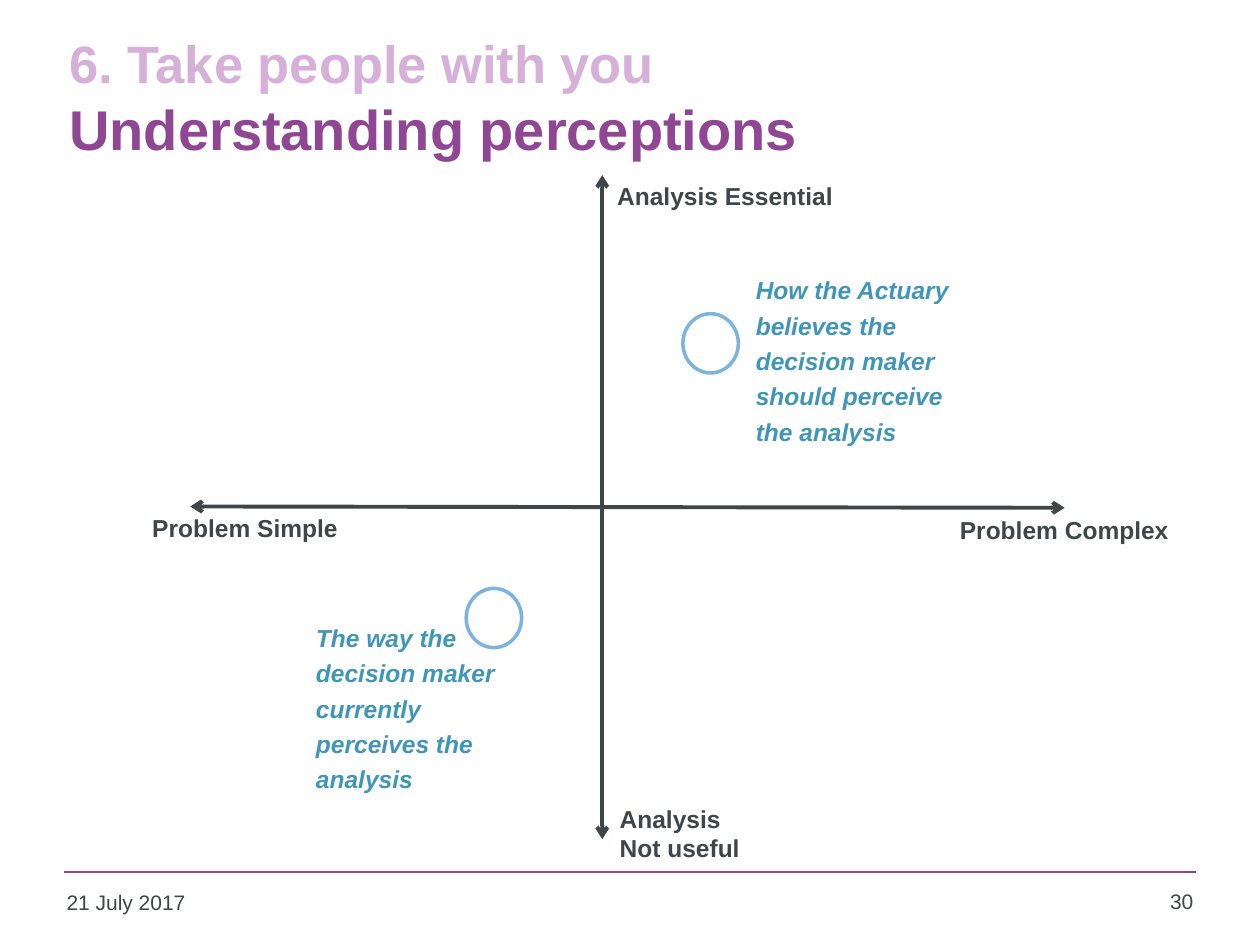
from pptx import Presentation
from pptx.dml.color import RGBColor
from pptx.enum.shapes import MSO_CONNECTOR as Connector, MSO_SHAPE as Shape
from pptx.enum.text import MSO_ANCHOR as Anchor, PP_ALIGN as Align
from pptx.oxml.ns import qn
from pptx.util import Inches, Pt
from lxml.etree import SubElement

PURPLE = RGBColor(0x8F, 0x46, 0x93)
LILAC = RGBColor(0xD7, 0xB0, 0xD9)
CHARCOAL = RGBColor(0x3F, 0x45, 0x48)
TEAL = RGBColor(0x40, 0x96, 0xB8)
SKY = RGBColor(0x7C, 0xB3, 0xE1)
FONT = "Arial"


def style_span(span, size, color, bold=False, italic=False):
    span.font.name = FONT
    span.font.size = Pt(size)
    span.font.color.rgb = color
    span.font.bold = bold
    span.font.italic = italic


def place(shape, left, top, width, height):
    shape.left, shape.top = Inches(left), Inches(top)
    shape.width, shape.height = Inches(width), Inches(height)


def add_title(page, first_line, second_line):
    title = page.shapes.title
    place(title, 0.45, 0.14, 9.07, 1.25)
    frame = title.text_frame
    frame.word_wrap = True
    frame.vertical_anchor = Anchor.MIDDLE
    para = frame.paragraphs[0]
    para.text = f"{first_line}\v{second_line}"
    para.alignment = Align.LEFT
    first, second = para.runs
    style_span(first, 30, LILAC, bold=True)
    style_span(second, 32, PURPLE, bold=True)


def add_text(page, text, bounds, size=14, color=CHARCOAL, bold=True,
             italic=False, align=Align.LEFT, spacing=1.0):
    box = page.shapes.add_textbox(*map(Inches, bounds))
    frame = box.text_frame
    frame.word_wrap = True
    frame.text = text
    para = frame.paragraphs[0]
    para.alignment = align
    para.line_spacing = spacing
    style_span(para.runs[0], size, color, bold, italic)


def add_perception(page, text, bounds):
    add_text(page, text, bounds, color=TEAL, italic=True, spacing=1.2)


def add_footer(page, text, bounds, align=Align.LEFT):
    add_text(page, text, bounds, size=12, bold=False, align=align)


def add_line(page, start, end, color, width):
    line = page.shapes.add_connector(
        Connector.STRAIGHT, *map(Inches, start + end))
    line.line.color.rgb = color
    line.line.width = Pt(width)
    SubElement(line._element.spPr, qn("a:effectLst"))
    return line


def add_axis(page, start, end):
    axis = add_line(page, start, end, CHARCOAL, 2.25)
    outline = axis.line._get_or_add_ln()
    for tag in ("a:headEnd", "a:tailEnd"):
        SubElement(outline, qn(tag), type="arrow")


def add_ring(page, left, top):
    ring = page.shapes.add_shape(
        Shape.OVAL, *map(Inches, (left, top, 0.44, 0.47)))
    ring.shadow.inherit = False
    ring.fill.background()
    ring.line.color.rgb = SKY
    ring.line.width = Pt(2)


def main():
    deck = Presentation()
    deck.slide_width, deck.slide_height = Inches(10), Inches(7.5)
    page = deck.slides.add_slide(deck.slide_layouts[5])

    add_title(page, "6. Take people with you", "Understanding perceptions")

    add_line(page, (0.51, 6.92), (9.49, 6.92), PURPLE, 1)
    add_footer(page, "21 July 2017", (0.43, 7.01, 2.2, 0.36))
    add_footer(page, "30", (8.86, 7, 0.71, 0.37), Align.RIGHT)

    add_axis(page, (4.78, 1.39), (4.78, 6.66))
    add_axis(page, (1.51, 4.02), (8.45, 4.03))
    add_text(page, "Problem Simple", (1.11, 4.02, 1.68, 0.34))
    add_text(page, "Problem Complex", (7.52, 4.04, 2.13, 0.34))
    add_text(page, "Analysis Essential", (4.8, 1.39, 2.17, 0.34))
    add_text(page, "Analysis Not useful", (4.82, 6.33, 1.2, 0.57))

    add_ring(page, 5.42, 2.49)
    add_perception(
        page,
        "How the Actuary believes the decision maker should perceive "
        "the analysis",
        (5.9, 2.09, 2.01, 1.51))
    add_ring(page, 3.7, 4.67)
    add_perception(
        page,
        "The way the decision maker currently perceives the analysis",
        (2.41, 4.85, 1.86, 1.51))

    deck.save("out.pptx")


if __name__ == "__main__":
    main()
